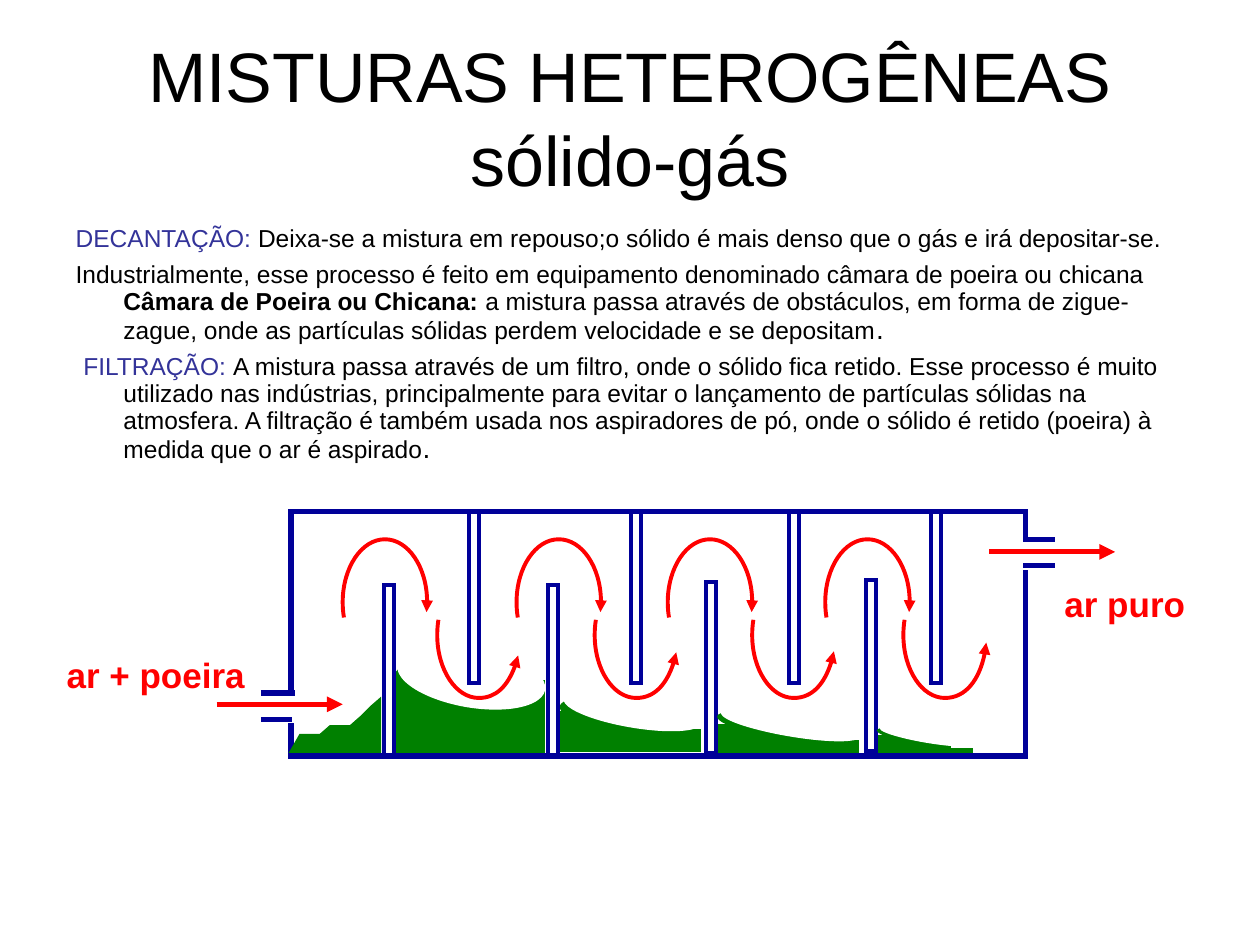
from math import cos, radians, sin, tan

from lxml import etree
from pptx import Presentation
from pptx.dml.color import RGBColor
from pptx.enum.shapes import MSO_CONNECTOR, MSO_SHAPE
from pptx.enum.text import MSO_ANCHOR, MSO_AUTO_SIZE, PP_ALIGN
from pptx.oxml.ns import qn
from pptx.util import Inches, Pt

RECT, OVAL = MSO_SHAPE.RECTANGLE, MSO_SHAPE.OVAL
STRAIGHT = MSO_CONNECTOR.STRAIGHT
CENTER, LEFT = PP_ALIGN.CENTER, PP_ALIGN.LEFT
MIDDLE, TOP = MSO_ANCHOR.MIDDLE, MSO_ANCHOR.TOP
FIXED, GROW = MSO_AUTO_SIZE.NONE, MSO_AUTO_SIZE.SHAPE_TO_FIT_TEXT

COLORS = {"black": "000000", "heading": "333399", "wall": "000099",
          "air": "FF0000", "dust": "008000", "white": "FFFFFF"}

# Content: each paragraph is a list of (text, format) runs
TITLE = [[("MISTURAS HETEROGÊNEAS", {}), ("\n", {}), ("sólido-gás", {})]]
HEADING = {"color": "heading"}
BIG = {"size": 16}
BODY = [
    [("DECANTAÇÃO: ", HEADING),
     ("Deixa-se a mistura em repouso;o sólido é mais denso que o gás e irá depositar-se.", {})],
    [("Industrialmente, esse processo é feito em equipamento denominado câmara de poeira "
      "ou chicana", {}),
     (" ", {"size": 16, "bold": True}),
     ("Câmara de Poeira ou Chicana: ", {"bold": True}),
     ("a mistura passa através de obstáculos, em forma de zigue-zague, onde as partículas "
      "sólidas perdem velocidade e se depositam", {}),
     (".", BIG)],
    [(" ", {"size": 16, "bold": True}),
     ("FILTRAÇÃO: ", HEADING),
     ("A mistura passa através de um filtro, onde o sólido fica retido. Esse processo é muito "
      "utilizado nas indústrias, principalmente para evitar o lançamento de partículas sólidas "
      "na atmosfera. A filtração é também usada nos aspiradores de pó, onde o sólido é retido "
      "(poeira) à medida que o ar é aspirado", {}),
     (".", BIG)],
]
LABELS = [("ar + poeira", (0.43, 5.14, 1.75, 0.43)), ("ar puro", (8.35, 4.57, 1.17, 0.43))]

# Chamber: boxes are left, top, width, height
CHAMBER = (2.31, 4.06, 5.83, 1.94)
BAFFLE_W, BAFFLE_H = 0.08, 1.36
BAFFLES = [(3.05, 4.64), (3.72, 4.06), (4.35, 4.64), (5.01, 4.06),
           (5.6, 4.62), (6.26, 4.06), (6.87, 4.6), (7.39, 4.06)]
OPENINGS = [(1.99, 5.5), (8.03, 4.28)]
OPENING_W, OPENING_H = 0.5, 0.22
PIPE_LENGTH = 0.25
PIPES = [(2.07, 5.5), (2.09, 5.5), (2.07, 5.71), (8.12, 4.28), (8.12, 4.49)]
FLOW_LENGTH = 1
FLOWS = [(1.72, 5.59), (7.85, 4.38)]

# Curved air paths: left edge, and the angle at which each lower one ends
OVER_LEFTS = [2.72, 4.1, 5.3, 6.55]
UNDER = [(3.47, 19), (4.72, 16), (5.97, 15), (7.17, 7)]
CURVE_RY = 0.5

# Dust piles: base box, mound box, then the hollow that shapes the mound
PILES_BEHIND = [
    ((4.45, 5.65, 1.11, 0.31), (4.44, 5.57, 1.11, 0.26), (4.47, 5.51, 1.11, 0.26)),
    ((3.14, 5.4, 1.18, 0.57), (3.12, 5.24, 1.18, 0.47), (3.15, 5.14, 1.18, 0.47)),
]
PILE_THREE = ((5.7, 5.75, 1.11, 0.22), (5.69, 5.69, 1.11, 0.18), (5.72, 5.66, 1.11, 0.18))
PILE_FOUR = ((6.97, 5.84, 0.75, 0.13), (6.96, 5.81, 0.75, 0.1), (6.98, 5.79, 0.75, 0.1))
TRIMS = [(5.4, 5.28, 0.17, 0.5), (6.65, 5.37, 0.17, 0.5)]
LAST_TRIM = (7.55, 5.64, 0.17, 0.29)
PILE_TILT = 9.7
INLET_DUST = [(2.3, 5.97), (3.02, 5.97), (3.02, 5.54), (2.94, 5.61), (2.86, 5.69),
              (2.78, 5.76), (2.62, 5.76), (2.54, 5.83), (2.38, 5.83)]


def rgb(name):
    return RGBColor.from_string(COLORS[name])


def place(shape, box):
    shape.left, shape.top, shape.width, shape.height = map(Inches, box)


def write(shape, paragraphs, size=14, color="black", bold=False, align=LEFT,
          anchor=TOP, fit=FIXED, hanging=0, spacing=None, before=0):
    frame = shape.text_frame
    frame.word_wrap, frame.auto_size, frame.vertical_anchor = True, fit, anchor
    for i, runs in enumerate(paragraphs):
        p = frame.add_paragraph() if i else frame.paragraphs[0]
        p.alignment, p.space_before = align, Pt(before)
        if spacing:
            p.line_spacing = spacing
        if hanging:
            props = p._p.get_or_add_pPr()
            props.set("marL", str(Inches(hanging)))
            props.set("indent", str(-Inches(hanging)))
            etree.SubElement(props, qn("a:buNone"))
        for text, style in runs:
            if text == "\n":
                p.add_line_break()
                continue
            run = p.add_run()
            run.text = text
            font = run.font
            font.name, font.size = "Arial", Pt(style.get("size", size))
            font.bold = style.get("bold", bold)
            font.color.rgb = rgb(style.get("color", color))


def paint(shape, line, width, fill=None):
    shape.shadow.inherit = False
    if fill:
        shape.fill.solid()
        shape.fill.fore_color.rgb = rgb(fill)
    else:
        shape.fill.background()
    shape.line.color.rgb = rgb(line)
    shape.line.width = Pt(width)
    etree.SubElement(shape.line._get_or_add_ln(), qn("a:miter"), lim="800000")


def add_block(kind, box, line, width=0.75, fill=None, tilt=0):
    block = diagram.add_shape(kind, *map(Inches, box))
    block.rotation = tilt
    paint(block, line, width, fill)


def add_arrowhead(shape):
    etree.SubElement(shape.line._get_or_add_ln(), qn("a:tailEnd"), type="triangle")


def add_line(start, length, color, arrow=False):
    x, y = start
    line = diagram.add_connector(STRAIGHT, Inches(x), Inches(y), Inches(x + length), Inches(y))
    line.line.color.rgb = rgb(color)
    line.line.width = Pt(3)
    if arrow:
        add_arrowhead(line)
    etree.SubElement(line._element.spPr, qn("a:effectLst"))


def add_outline(points, close, line, width, fill=None):
    points = [(Inches(x), Inches(y)) for x, y in points]
    builder = diagram.build_freeform(*points[0])
    builder.add_line_segments(points[1:], close=close)
    outline = builder.convert_to_shape()
    paint(outline, line, width, fill)
    return outline


def add_air_curve(left, center_y, rx, degrees):
    """Draw an elliptical arrow through the given angles, one Bézier per step."""
    def point(a, pull=0):
        return (left + rx + rx * (cos(a) - pull * sin(a)),
                center_y + CURVE_RY * (sin(a) + pull * cos(a)))

    angles = [radians(d) for d in degrees]
    curve = add_outline([point(a) for a in angles], False, "air", 2.25)
    segments = list(curve._element.iter(qn("a:lnTo")))
    for segment, a, b in zip(segments, angles, angles[1:]):
        pull = 4 / 3 * tan((b - a) / 4)
        segment.tag = qn("a:cubicBezTo")
        for i, (x, y) in enumerate([point(a, pull), point(b, -pull)]):
            segment.insert(i, etree.Element(qn("a:pt"), x=str(Inches(x) - curve.left),
                                            y=str(Inches(y) - curve.top)))
    add_arrowhead(curve)


def add_pile(base, mound, hollow):
    add_block(RECT, base, "dust", fill="dust")
    add_block(OVAL, mound, "dust", fill="dust", tilt=PILE_TILT)
    add_block(OVAL, hollow, "white", fill="white", tilt=PILE_TILT)


prs = Presentation()
prs.slide_width, prs.slide_height = Inches(10), Inches(7.5)
slide = prs.slides.add_slide(prs.slide_layouts[1])

# Title and explanation
title, body = slide.placeholders
place(title, (0.5, 0.3, 9, 1.25))
write(title, TITLE, size=40, align=CENTER, anchor=MIDDLE)
place(body, (0.5, 1.75, 9, 4.95))
write(body, BODY, hanging=0.38, spacing=0.9, before=3.2)

# Chamber with its baffles, over the two rear piles
diagram = slide.shapes.add_group_shape().shapes
for pile in PILES_BEHIND:
    add_pile(*pile)
add_block(RECT, CHAMBER, "wall", 3)
for x, y in BAFFLES:
    add_block(RECT, (x, y, BAFFLE_W, BAFFLE_H), "wall", 2.25)

# Inlet and outlet
for x, y in OPENINGS:
    add_block(RECT, (x, y, OPENING_W, OPENING_H), "white", 3, "white")
for start in PIPES:
    add_line(start, PIPE_LENGTH, "wall")
for start in FLOWS:
    add_line(start, FLOW_LENGTH, "air", arrow=True)

# Air going over and under the baffles
for left in OVER_LEFTS:
    add_air_curve(left, 4.78, 0.335, (166, 180, 270, 360, 369))
for left, end in UNDER:
    add_air_curve(left, 5.04, 0.33, (194, 180, 90, end))

# Front dust
add_outline(INLET_DUST, True, "dust", 0.75, "dust")
add_pile(*PILE_THREE)
for trim in TRIMS:
    add_block(RECT, trim, "white", fill="white")
add_pile(*PILE_FOUR)
add_block(RECT, LAST_TRIM, "white", fill="white")

# Air labels
for text, box in LABELS:
    label = diagram.add_textbox(*map(Inches, box))
    write(label, [[(text, {})]], size=20, color="air", bold=True, fit=GROW)

prs.save("out.pptx")
